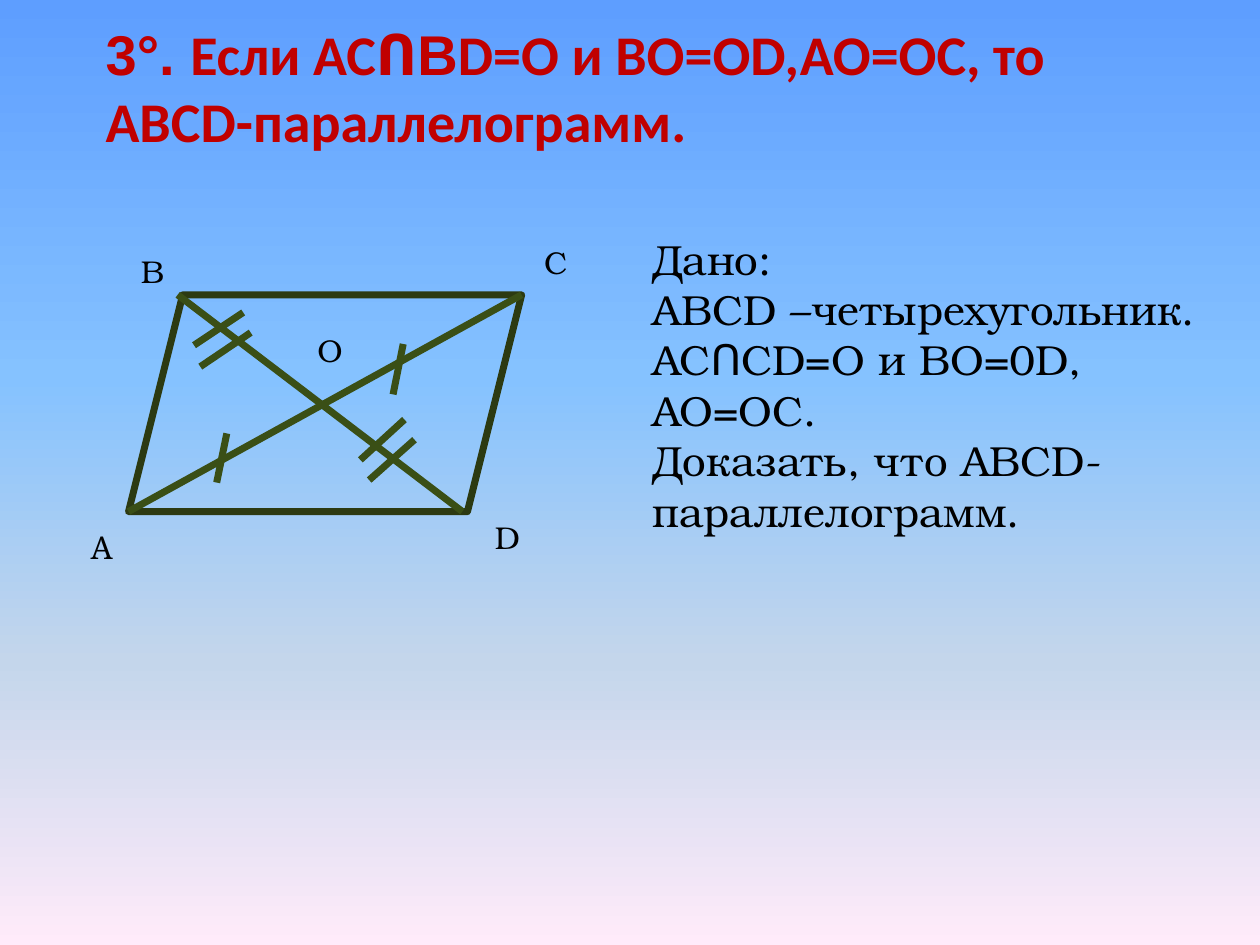
from dataclasses import dataclass

from lxml.etree import SubElement
from pptx import Presentation
from pptx.dml.color import RGBColor
from pptx.enum.shapes import MSO_CONNECTOR, MSO_SHAPE
from pptx.enum.text import MSO_ANCHOR
from pptx.oxml import parse_xml
from pptx.oxml.ns import nsdecls, qn
from pptx.util import Inches, Pt


@dataclass(frozen=True)
class Theme:
    sky: tuple = ((0, "5E9EFF"), (40, "85C2FF"), (70, "C4D6EB"), (100, "FFEBFA"))
    title: str = "C00000"
    ink: str = "000000"
    edge: str = "2C3A12"
    mark: str = "3A4F16"
    head: int = 32
    body: int = 24
    label: int = 18
    line: int = 4
    serif: str = "TeX Gyre Bonum"


def write(frame, paras, *, size, color, font, bold=False):
    for i, runs in enumerate(paras):
        para = frame.paragraphs[0] if i == 0 else frame.add_paragraph()
        for text, face in runs:
            run = para.add_run()
            run.text = text
            run.font.name = face or font
            run.font.size = Pt(size)
            run.font.bold = bold
            run.font.color.rgb = RGBColor.from_string(color)


class Board:
    def __init__(self, slide, theme):
        self.slide = slide
        self.theme = theme

    def sky(self):
        fill = self.slide.background.fill
        fill.solid()
        stops = "".join(
            f'<a:gs pos="{pos * 1000}"><a:srgbClr val="{color}"/></a:gs>'
            for pos, color in self.theme.sky
        )
        blend = parse_xml(
            f'<a:gradFill {nsdecls("a")} rotWithShape="1"><a:gsLst>{stops}</a:gsLst>'
            '<a:lin ang="5400000" scaled="0"/></a:gradFill>'
        )
        plain = next(self.slide.element.iter(qn("a:solidFill")))
        plain.getparent().replace(plain, blend)

    def text(self, box, paras, **style):
        frame = self.slide.shapes.add_textbox(*map(Inches, box)).text_frame
        frame.word_wrap = True
        write(frame, paras, **style)
        return frame

    def label(self, name, left, top, font=None):
        self.text((left, top, 0.31, 0.4), [[(name, None)]], size=self.theme.label,
                  color=self.theme.ink, font=font or self.theme.serif)

    def pen(self, line, color):
        line.color.rgb = RGBColor.from_string(color)
        line.width = Pt(self.theme.line)

    def figure(self, box):
        shape = self.slide.shapes.add_shape(MSO_SHAPE.PARALLELOGRAM, *map(Inches, box))
        shape.shadow.inherit = False
        shape.fill.background()
        self.pen(shape.line, self.theme.edge)

    def stroke(self, ends, shapes=None):
        shapes = self.slide.shapes if shapes is None else shapes
        line = shapes.add_connector(MSO_CONNECTOR.STRAIGHT, *map(Inches, ends))
        self.pen(line.line, self.theme.mark)
        SubElement(line.element.spPr, qn("a:effectLst"))

    def pair(self, *ticks):
        group = self.slide.shapes.add_group_shape()
        for ends in ticks:
            self.stroke(ends, group.shapes)


def main():
    deck = Presentation()
    deck.slide_width, deck.slide_height = Inches(10), Inches(7.5)
    theme = Theme()
    board = Board(deck.slides.add_slide(deck.slide_layouts[6]), theme)
    board.sky()

    title = board.text(
        (0.74, 0.21, 8.53, 1.6),
        [[("3°. ", "Arial"), ("Если AC", None), ("ՈB", "Arial"),
          ("D=O и BO=OD,AO=OC, то ABCD-параллелограмм.", None)]],
        size=theme.head, color=theme.title, font="Calibri", bold=True,
    )
    title.vertical_anchor = MSO_ANCHOR.BOTTOM
    title.margin_bottom = Inches(0.59)

    left, top, width, height = 1.02, 2.34, 3.12, 1.72
    right, base = left + width, top + height
    board.figure((left, top, width, height))
    board.label("А", 0.62, 4.14, "Cambria")
    board.label("B", 1.02, 1.95)
    board.label("C", 4.22, 1.88)
    board.label("D", 3.83, 4.06)

    board.text(
        (5.08, 1.8, 4.92, 2.52),
        [[("Дано:", None)],
         [("ABCD –четырехугольник. AC", None), ("Ո", "Arial"),
          ("CD=O и BO=0D, AO=OC.", None)],
         [("Доказать, что ABCD-параллелограмм.", None)]],
        size=theme.body, color=theme.ink, font=theme.serif,
    )

    board.pair((1.54, 2.74, 1.93, 2.48), (1.59, 2.91, 1.99, 2.64))
    board.pair((2.86, 3.65, 3.21, 3.33), (2.93, 3.81, 3.29, 3.49))
    board.stroke((3.2, 2.73, 3.12, 3.13))
    board.stroke((1.8, 3.44, 1.72, 3.83))
    board.stroke((1.41, top, 3.67, base))
    board.stroke((left, base, right, top))
    board.label("O", 2.42, 2.58)

    deck.save("out.pptx")


if __name__ == "__main__":
    main()
